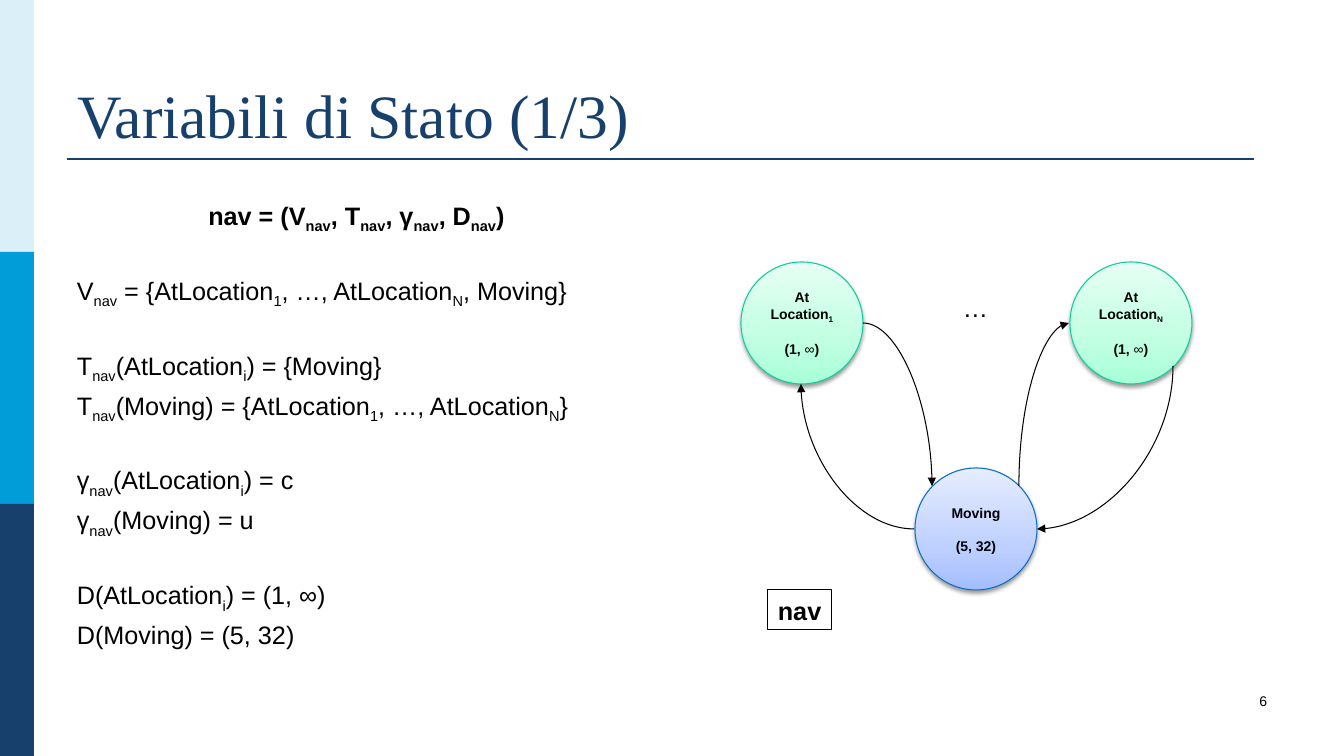
from lxml import etree
from pptx import Presentation
from pptx.dml.color import RGBColor
from pptx.enum.shapes import MSO_CONNECTOR, MSO_SHAPE
from pptx.enum.text import MSO_ANCHOR, PP_ALIGN
from pptx.oxml import parse_xml
from pptx.oxml.ns import nsdecls, qn
from pptx.util import Pt

PX = 914400 / 100.8
OVAL, RECT = MSO_SHAPE.OVAL, MSO_SHAPE.RECTANGLE
STRAIGHT, CURVE = MSO_CONNECTOR.STRAIGHT, MSO_CONNECTOR.CURVE
LEFT, MID, RIGHT = PP_ALIGN.LEFT, PP_ALIGN.CENTER, PP_ALIGN.RIGHT
TOP, CENTRE, BASE = MSO_ANCHOR.TOP, MSO_ANCHOR.MIDDLE, MSO_ANCHOR.BOTTOM

BLACK = RGBColor(0x00, 0x00, 0x00)
NAVY = RGBColor(0x17, 0x40, 0x6D)
SKY = RGBColor(0x00, 0x9D, 0xD9)
PALE = RGBColor(0xDB, 0xEF, 0xF9)
GREEN = RGBColor(0x0B, 0xCF, 0x9A)
BLUE = RGBColor(0x0A, 0x6D, 0xC6)
MINT = [(0, RGBColor(0xA6, 0xFF, 0xD7)), (35, RGBColor(0xC0, 0xFF, 0xE2)),
        (100, RGBColor(0xE7, 0xFF, 0xF4))]
ICE = [(0, RGBColor(0xA3, 0xBD, 0xFF)), (35, RGBColor(0xBE, 0xD0, 0xFF)),
       (100, RGBColor(0xE6, 0xED, 0xFF))]

TITLE = "Variabili di Stato (1/3)"
HEAD = "nav = (V~nav~, T~nav~, γ~nav~, D~nav~)"
GROUPS = [
    ["V~nav~ = {AtLocation~1~, …, AtLocation~N~, Moving}"],
    ["T~nav~(AtLocation~i~) = {Moving}",
     "T~nav~(Moving) = {AtLocation~1~, …, AtLocation~N~}"],
    ["γ~nav~(AtLocation~i~) = c", "γ~nav~(Moving) = u"],
    ["D(AtLocation~i~) = (1, ∞)", "D(Moving) = (5, 32)"],
]
BARS = [PALE, SKY, NAVY]
SIZE = 122
STATES = [
    (741, 262, MINT, GREEN, ["At", "Location~1~"], "(1, ~∞~)"),
    (1070, 262, MINT, GREEN, ["At", "Location~N~"], "(1, ~∞~)"),
    (915, 468, ICE, BLUE, ["Moving"], "(5, 32)"),
]
ARCS = [
    ((914, 529), (801, 384), "tailEnd"),
    ((863, 323), (932, 486), "tailEnd"),
    ((1037, 529), (1173, 366), "headEnd"),
    ((1069, 323), (1019, 486), "headEnd"),
]
LABELS = [
    ((768, 590, 64, 40), "nav", {"bold": True}, LEFT, BLACK),
    ((953, 287, 45, 40), "…", {}, LEFT, None),
    ((964, 688, 313, 50), "6", {"size": Pt(10)}, RIGHT, None),
]
FONT = {"name": "Arial", "size": Pt(18), "bold": False}


def px(*vals):
    """Turn pixels into EMU."""
    return [round(val * PX) for val in vals]


def put(obj, vals):
    """Set attributes from a dict."""
    for key, val in vals.items():
        setattr(obj, key, val)


def write(frame, lines, font=None, color=BLACK, **form):
    """Write (text, space, align, bold) lines, with marks round subscripts."""
    put(frame, {"word_wrap": True, "vertical_anchor": TOP, **form})
    for num, (text, space, align, bold) in enumerate(lines):
        para = frame.add_paragraph() if num else frame.paragraphs[0]
        put(para, {"space_before": Pt(space), "alignment": align})
        for odd, part in enumerate(text.split("~")):
            run = para.add_run()
            run.text = part
            put(run.font, {**FONT, "bold": bold, **(font or {})})
            run.font.color.rgb = color
            if odd % 2 and part == "∞":
                run.font.bold = False
            elif odd % 2:
                run.font._element.set("baseline", "-25000")


def shade(shape, stops):
    """Give a shape a vertical gradient and a soft shadow."""
    marks = "".join(f'<a:gs pos="{pos * 1000}"><a:srgbClr val="{tone}"/></a:gs>'
                    for pos, tone in stops)
    props = shape._element.spPr
    props.find(qn("a:prstGeom")).addnext(parse_xml(
        f'<a:gradFill {nsdecls("a")} rotWithShape="1"><a:gsLst>{marks}</a:gsLst>'
        '<a:lin ang="16200000" scaled="0"/></a:gradFill>'))
    props.append(parse_xml(
        f'<a:effectLst {nsdecls("a")}><a:outerShdw blurRad="40000" dist="20000" '
        'dir="5400000" rotWithShape="0"><a:srgbClr val="000000">'
        '<a:alpha val="38000"/></a:srgbClr></a:outerShdw></a:effectLst>'))


def link(shapes, kind, start, end, color, width):
    """Draw a plain connector."""
    line = shapes.add_connector(kind, *px(*start, *end))
    line.line.color.rgb = color
    line.line.width = Pt(width)
    etree.SubElement(line._element.spPr, qn("a:effectLst"))
    return line


def main():
    """Build the slide."""
    deck = Presentation()
    deck.slide_width, deck.slide_height = px(1344, 756)
    slide = deck.slides.add_slide(deck.slide_layouts[5])
    shapes = slide.shapes

    for num, tone in enumerate(BARS):
        bar = shapes.add_shape(RECT, *px(0, 252 * num, 34, 252))
        bar.shadow.inherit = False
        bar.fill.solid()
        bar.fill.fore_color.rgb = tone
        bar.line.fill.background()
    link(shapes, STRAIGHT, (67, 159), (1254, 159), NAVY, 1.5)

    title = shapes.title
    put(title, dict(zip(("left", "top", "width", "height"), px(67, 30, 1210, 126))))
    write(title.text_frame, [(TITLE, 0, LEFT, False)],
          {"name": "Times New Roman", "size": Pt(44)}, NAVY, vertical_anchor=BASE)

    lines = [(HEAD, 4, MID, True)]
    for group in GROUPS:
        lines += [(text, 4 if num else 29, LEFT, False)
                  for num, text in enumerate(group)]
    body = shapes.add_textbox(*px(67, 195, 579, 499))
    write(body.text_frame, lines)

    for left, top, stops, edge, names, span in STATES:
        state = shapes.add_shape(OVAL, *px(left, top, SIZE, SIZE))
        state.line.color.rgb = edge
        state.line.width = Pt(0.75)
        shade(state, stops)
        lines = [(name, 0, MID, True) for name in names] + [(span, 11.5, MID, True)]
        write(state.text_frame, lines, {"size": Pt(10)}, vertical_anchor=CENTRE,
              margin_left=0, margin_right=0)

    for start, end, tip in ARCS:
        arc = link(shapes, CURVE, start, end, BLACK, 0.75)
        arc._element.spPr.find(qn("a:prstGeom")).set("prst", "curvedConnector2")
        etree.SubElement(arc.line._get_or_add_ln(), qn(f"a:{tip}"), type="triangle")

    for place, text, font, align, edge in LABELS:
        label = shapes.add_textbox(*px(*place))
        write(label.text_frame, [(text, 0, align, False)], font,
              word_wrap=align == RIGHT)
        if edge is not None:
            label.line.color.rgb = edge
            label.line.width = Pt(0.75)

    deck.save("out.pptx")


if __name__ == "__main__":
    main()
